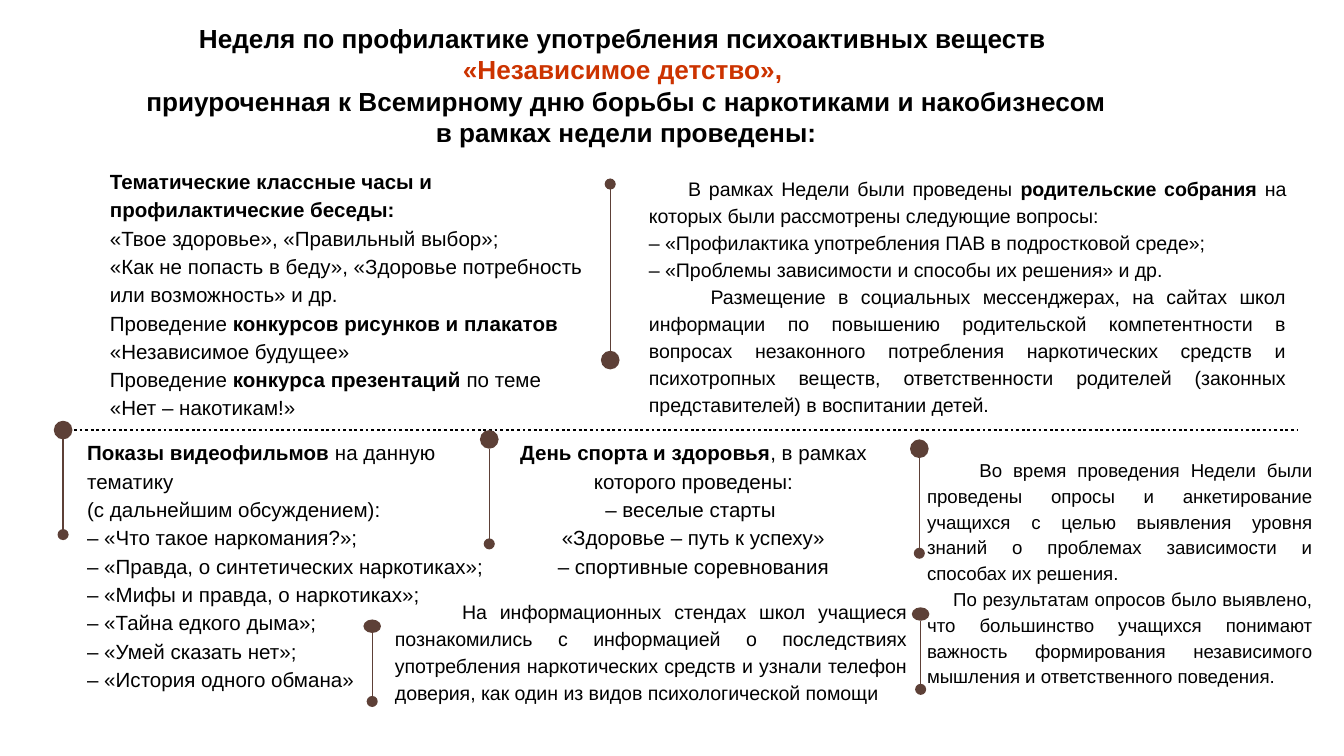
from dataclasses import dataclass

from lxml import etree
from pptx import Presentation
from pptx.dml.color import RGBColor
from pptx.enum.dml import MSO_LINE
from pptx.enum.shapes import MSO_CONNECTOR, MSO_SHAPE
from pptx.enum.text import MSO_ANCHOR, PP_ALIGN
from pptx.oxml.ns import qn
from pptx.util import Pt

STRAIGHT = MSO_CONNECTOR.STRAIGHT
OVAL = MSO_SHAPE.OVAL
DOTTED = MSO_LINE.ROUND_DOT
TOP, BOTTOM = MSO_ANCHOR.TOP, MSO_ANCHOR.BOTTOM
LEFT, CENTER, JUSTIFY = PP_ALIGN.LEFT, PP_ALIGN.CENTER, PP_ALIGN.JUSTIFY


@dataclass(frozen=True)
class Theme:
    font: str = "Arial"
    ink: RGBColor = RGBColor(0x00, 0x00, 0x00)
    accent: RGBColor = RGBColor(0xCC, 0x33, 0x00)
    pin: RGBColor = RGBColor(0x5D, 0x40, 0x37)
    title: float = 14
    large: float = 11
    medium: float = 10.5
    small: float = 10
    inset: float = 7.2
    leading: float = 1.15


@dataclass(frozen=True)
class Box:
    left: float
    top: float
    width: float
    height: float


THEME = Theme()


def add_text(slide, box, lines, size, align=LEFT, indents=None,
             leading=THEME.leading, anchor=TOP):
    """Text between ** marks is bold; indents maps a line number to points."""
    frame = slide.shapes.add_textbox(
        Pt(box.left), Pt(box.top), Pt(box.width), Pt(box.height)).text_frame
    frame.word_wrap = True
    frame.vertical_anchor = anchor
    frame.margin_left = frame.margin_right = Pt(THEME.inset)
    frame.margin_top = frame.margin_bottom = Pt(THEME.inset)
    for number, line in enumerate(lines):
        paragraph = frame.paragraphs[0] if number == 0 else frame.add_paragraph()
        paragraph.alignment = align
        paragraph.line_spacing = leading
        if indents and number in indents:
            properties = paragraph._p.get_or_add_pPr()
            properties.set("marL", "0")
            properties.set("indent", str(Pt(indents[number])))
        for position, words in enumerate(line.split("**")):
            if words:
                run = paragraph.add_run()
                run.text = words
                run.font.name = THEME.font
                run.font.size = Pt(size)
                run.font.bold = position % 2 == 1
                run.font.color.rgb = THEME.ink
    return frame


def add_line(shapes, start, end, color, width):
    line = shapes.add_connector(STRAIGHT, *(Pt(value) for value in start + end))
    line.line.color.rgb = color
    line.line.width = Pt(width)
    etree.SubElement(line._element.spPr, qn("a:effectLst"))
    return line


def add_pin(slide, box, x, y, length, width=10, height=10):
    """x is the stem and y the top of the head, both relative to the box."""
    x, y = box.left + x, box.top + y
    pin = slide.shapes.add_group_shape().shapes
    head = pin.add_shape(OVAL, Pt(x - width / 2), Pt(y), Pt(width), Pt(height))
    head.shadow.inherit = False
    head.fill.solid()
    head.fill.fore_color.rgb = THEME.pin
    head.line.fill.background()
    start = y + height if length > 0 else y
    stem = add_line(pin, (x, start), (x, start + length), THEME.pin, 0.75)
    etree.SubElement(stem.line._get_or_add_ln(), qn("a:tailEnd"), type="oval")


def add_small_pin(slide, box, x, y):
    add_pin(slide, box, x, y, 36.7, 9.4, 7.2)


def add_heading(slide, box):
    heading = add_text(slide, box, [
        "**Неделя по профилактике употребления психоактивных веществ **",
        "**«Независимое детство», **",
        "**приуроченная к Всемирному дню борьбы с наркотиками и накобизнесом**",
        "**в рамках недели проведены:**",
    ], THEME.title, CENTER, leading=1, anchor=BOTTOM)
    heading.paragraphs[1].runs[0].font.color.rgb = THEME.accent


def add_divider(slide, box):
    divider = add_line(slide.shapes, (box.left, box.top),
                       (box.left + box.width, box.top), THEME.ink, 1.5)
    divider.line.dash_style = DOTTED


def add_class_hours(slide, box):
    add_text(slide, box, [
        "**Тематические классные часы и профилактические беседы:**",
        "«Твое здоровье», «Правильный выбор»;",
        "«Как не попасть в беду», «Здоровье потребность или возможность» и др.",
        "Проведение **конкурсов рисунков и плакатов **«Независимое будущее»",
        "Проведение **конкурса презентаций **по теме «Нет – накотикам!»",
    ], THEME.large)


def add_parent_meetings(slide, box):
    add_pin(slide, box, -13.7, 102.2, -89.3)
    add_text(slide, box, [
        "В рамках Недели были проведены **родительские собрания **на которых "
        "были рассмотрены следующие вопросы:",
        "– «Профилактика употребления ПАВ в подростковой среде»;",
        "– «Проблемы зависимости и способы их решения» и др.",
        "Размещение в социальных мессенджерах, на сайтах школ информации по "
        "повышению родительской компетентности в вопросах незаконного "
        "потребления наркотических средств и психотропных веществ, "
        "ответственности родителей (законных представителей) в воспитании детей.",
    ], THEME.medium, JUSTIFY, {0: 21, 3: 33})


def add_films(slide, box):
    add_pin(slide, box, -5.8, -1.4, 51)
    add_text(slide, box, [
        "**Показы видеофильмов **на данную тематику",
        "(с дальнейшим обсуждением):",
        "– «Что такое наркомания?»;",
        "– «Правда, о синтетических наркотиках»;",
        "– «Мифы и правда, о наркотиках»;",
        "– «Тайна едкого дыма»;",
        "– «Умей сказать нет»;",
        "– «История одного обмана»",
    ], THEME.large)


def add_sports_day(slide, box):
    add_pin(slide, box, 0, 3.6, 51)
    add_text(slide, box, [
        "**День спорта и здоровья**, в рамках которого проведены:",
        "– веселые старты ",
        "«Здоровье – путь к успеху»",
        "– спортивные соревнования",
    ], THEME.large, CENTER)


def add_info_stands(slide, box):
    add_small_pin(slide, box, -5.1, 19.4)
    add_text(slide, box, [
        "На информационных стендах школ учащиеся познакомились с информацией "
        "о последствиях употребления наркотических средств и узнали телефон "
        "доверия, как один из видов психологической помощи",
    ], THEME.medium, JUSTIFY, {0: 36})


def add_survey(slide, box):
    add_pin(slide, box, 2.9, -1.5, 51)
    add_small_pin(slide, box, 3.6, 88.5)
    add_text(slide, box, [
        "Во время проведения Недели были проведены опросы и анкетирование "
        "учащихся с целью выявления уровня знаний о проблемах зависимости и "
        "способах их решения.",
        "По результатам опросов было выявлено, что большинство учащихся "
        "понимают важность формирования независимого мышления и "
        "ответственного поведения.",
    ], THEME.small, JUSTIFY, {0: 28, 1: 14})


def main():
    deck = Presentation()
    deck.slide_width, deck.slide_height = Pt(720), Pt(405)
    slide = deck.slides.add_slide(deck.slide_layouts[6])
    add_divider(slide, Box(39.6, 230.4, 656, 0))
    add_heading(slide, Box(0, 7.2, 671, 79.2))
    add_class_hours(slide, Box(51.8, 81.4, 269.3, 144))
    add_parent_meetings(slide, Box(340.6, 85.7, 355.7, 128.9))
    add_films(slide, Box(39.6, 226.8, 241.9, 166.3))
    add_sports_day(slide, Box(262.1, 226.8, 218.9, 81.4))
    add_info_stands(slide, Box(204.5, 312.5, 288.7, 86.4))
    add_survey(slide, Box(489.6, 236.9, 220.3, 149.8))
    deck.save("out.pptx")


if __name__ == "__main__":
    main()
